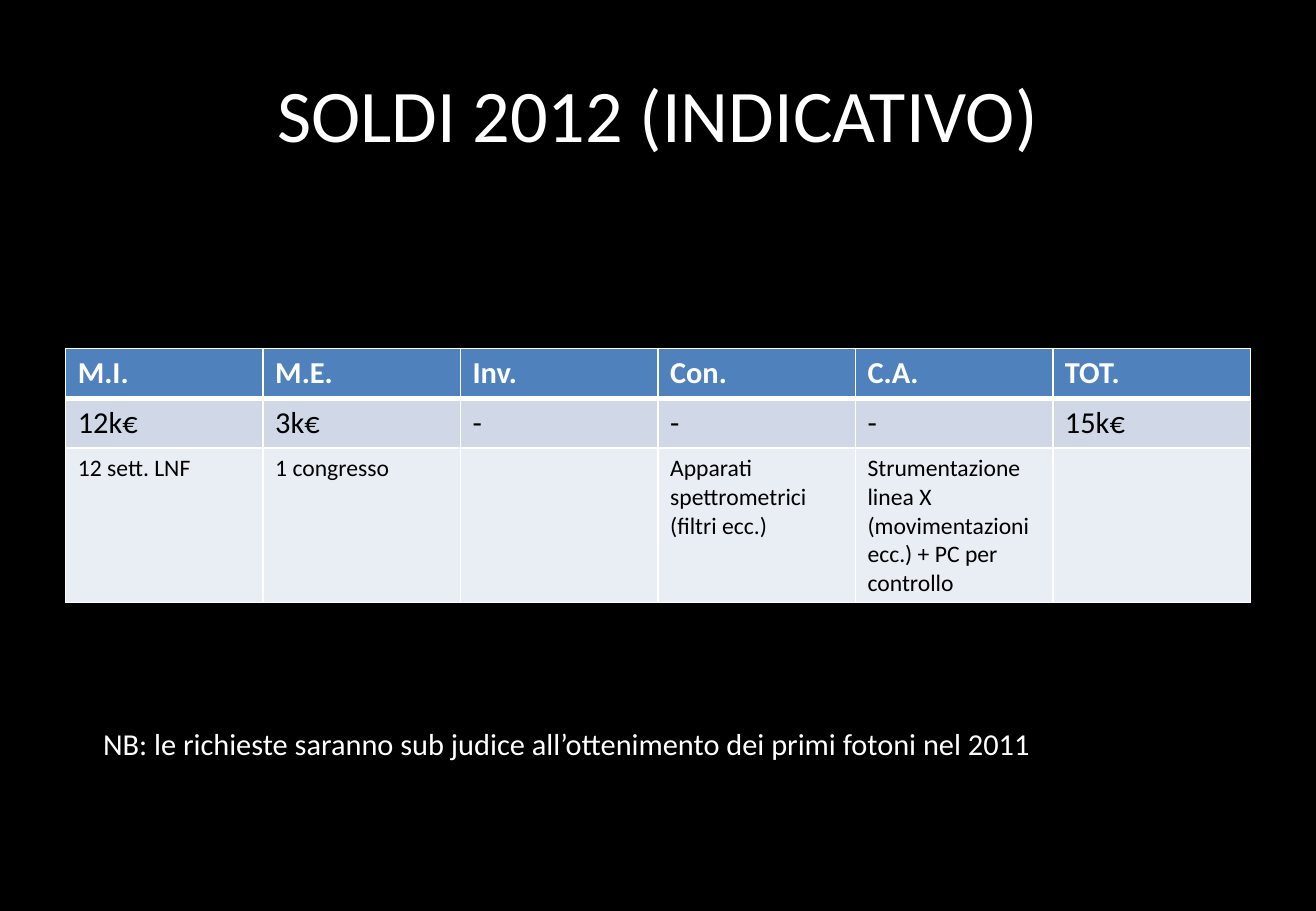
from lxml import etree
from pptx import Presentation
from pptx.dml.color import RGBColor
from pptx.enum.text import MSO_ANCHOR, PP_ALIGN
from pptx.oxml.ns import qn
from pptx.util import Inches, Pt

CENTER, LEFT = PP_ALIGN.CENTER, PP_ALIGN.LEFT
MIDDLE, TOP = MSO_ANCHOR.MIDDLE, MSO_ANCHOR.TOP
FONT = "Calibri"
COLORS = {
    "background": "000000",
    "light": "FFFFFF",
    "dark": "000000",
    "header": "4F81BD",
    "amounts": "D0D8E8",
    "details": "E9EDF4",
}
BUDGET = [
    ["M.I.", "M.E.", "Inv.", "Con.", "C.A.", "TOT."],
    ["12k€", "3k€", "-", "-", "-", "15k€"],
    ["12 sett. LNF", "1 congresso", "", "Apparati spettrometrici (filtri ecc.)",
     "Strumentazione linea X (movimentazioni ecc.) + PC per controllo", ""],
]
ROW_STYLES = [
    {"height": 0.41, "fill": "header", "color": "light", "size": 18, "bold": True},
    {"height": 0.41, "fill": "amounts", "color": "dark", "size": 18, "bold": False},
    {"height": 1.27, "fill": "details", "color": "dark", "size": 14, "bold": False},
]


def rgb(name):
    return RGBColor.from_string(COLORS[name])


def write(tf, text, size, color, bold=False, align=LEFT):
    p = tf.paragraphs[0]
    p.alignment = align
    font = p.font
    if text:
        r = p.add_run()
        r.text = text
        font = r.font
    for name, value in {"name": FONT, "size": Pt(size), "bold": bold}.items():
        setattr(font, name, value)
    font.color.rgb = rgb(color)


def add_text(s, box, text, size, align=LEFT, anchor=TOP):
    tf = s.shapes.add_textbox(*map(Inches, box)).text_frame
    tf.word_wrap = True
    tf.vertical_anchor = anchor
    write(tf, text, size, "light", align=align)


def set_borders(cell, widths):
    """Draw light cell borders; widths maps L, R, T, B to points."""
    tcPr = cell._tc.get_or_add_tcPr()
    for side, width in widths.items():
        ln = etree.SubElement(tcPr, qn(f"a:ln{side}"), w=str(Pt(width)))
        fill = etree.SubElement(ln, qn("a:solidFill"))
        etree.SubElement(fill, qn("a:srgbClr"), val=COLORS["light"])


def add_budget_table(s, left, top, width):
    height = sum(style["height"] for style in ROW_STYLES)
    table = s.shapes.add_table(len(BUDGET), len(BUDGET[0]),
                               *map(Inches, (left, top, width, height))).table
    for i, (texts, style) in enumerate(zip(BUDGET, ROW_STYLES)):
        table.rows[i].height = Inches(style["height"])
        borders = {"L": 1, "R": 1, "T": 3 if i == 1 else 1, "B": 3 if i == 0 else 1}
        for cell, text in zip(table.rows[i].cells, texts):
            set_borders(cell, borders)
            cell.fill.solid()
            cell.fill.fore_color.rgb = rgb(style["fill"])
            write(cell.text_frame, text, style["size"], style["color"], style["bold"])


def main():
    prs = Presentation()
    prs.slide_width, prs.slide_height = Inches(10.83), Inches(7.5)
    s = prs.slides.add_slide(prs.slide_layouts[6])
    s.background.fill.solid()
    s.background.fill.fore_color.rgb = rgb("background")
    add_text(s, (0.54, 0.3, 9.75, 1.25), "SOLDI 2012 (INDICATIVO)", 44, CENTER, MIDDLE)
    add_budget_table(s, 0.54, 2.87, 9.75)
    add_text(s, (0.75, 5.92, 8.54, 0.4),
             "NB: le richieste saranno sub judice all’ottenimento dei primi fotoni nel 2011", 18)
    prs.save("out.pptx")


if __name__ == "__main__":
    main()
